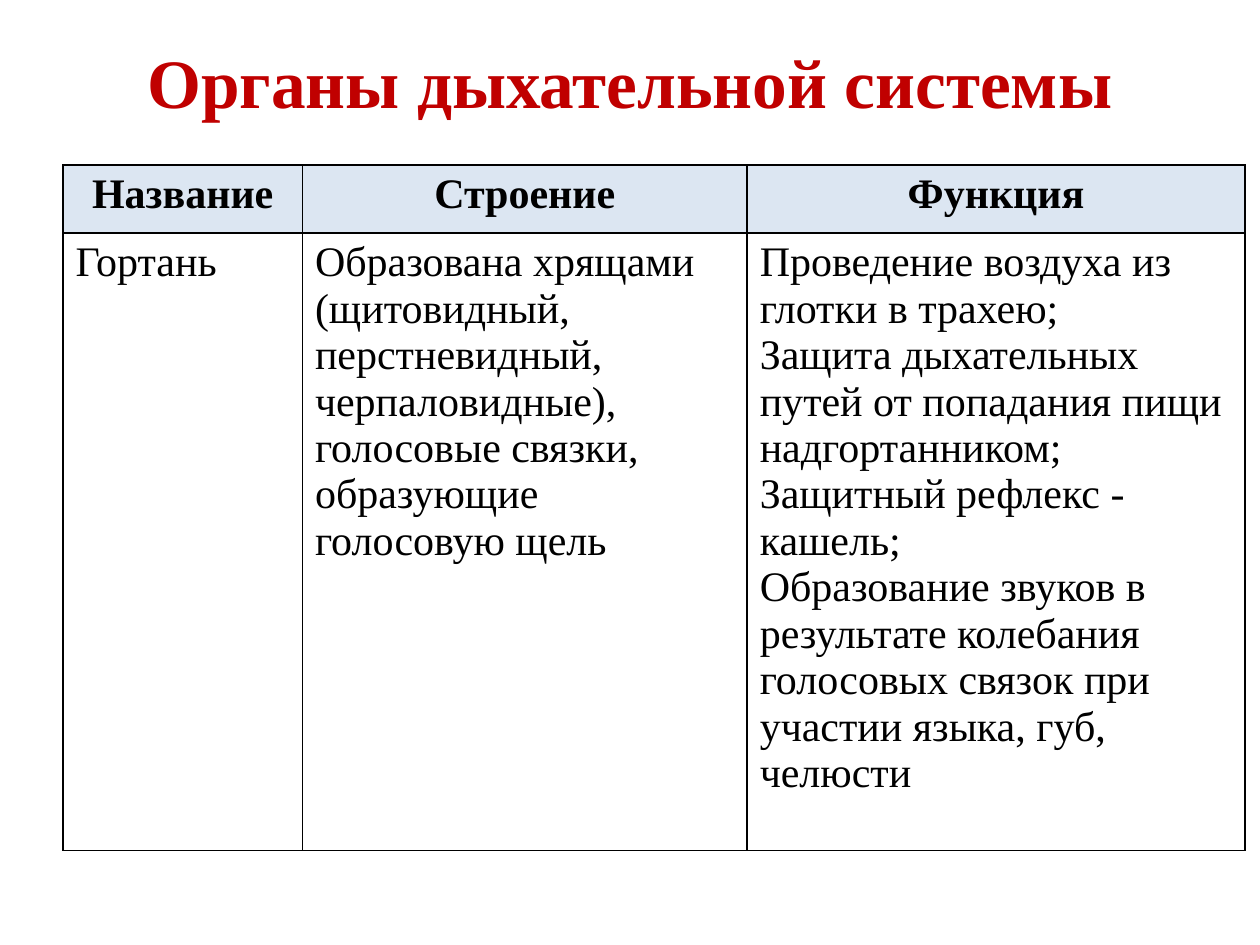
from dataclasses import dataclass

from lxml.etree import SubElement
from pptx import Presentation
from pptx.dml.color import RGBColor
from pptx.enum.text import MSO_ANCHOR as Anchor, PP_ALIGN as Align
from pptx.oxml.ns import qn
from pptx.util import Inches, Pt

HEADINGS = ["Название", "Строение", "Функция"]
LARYNX = [
    ["Гортань"],
    ["Образована хрящами (щитовидный, перстневидный, черпаловидные), "
     "голосовые связки, образующие голосовую щель"],
    ["Проведение воздуха из глотки в трахею;",
     "Защита дыхательных путей от попадания пищи надгортанником;",
     "Защитный рефлекс - кашель;",
     "Образование звуков в результате колебания голосовых связок "
     "при участии языка, губ, челюсти"],
]


def color(code):
    return RGBColor.from_string(code)


@dataclass
class Composer:
    """Style and current page; places and sizes are shares of the page."""
    deck: object
    page: object
    font: str = "Times New Roman"
    ink: str = "000000"
    accent: str = "C00000"
    header_fill: str = "DCE6F2"
    text_size: float = 24
    title_size: float = 39.6

    def across(self, share):
        return int(self.deck.slide_width * share)

    def down(self, share):
        return int(self.deck.slide_height * share)

    def add_text(self, frame, lines, size, ink, bold=False, align=Align.LEFT):
        for index, line in enumerate(lines):
            para = frame.add_paragraph() if index else frame.paragraphs[0]
            para.alignment = align
            span = para.add_run()
            span.text = line
            span.font.name = self.font
            span.font.size = Pt(size)
            span.font.bold = bold
            span.font.color.rgb = color(ink)

    def title(self, text, left, top, width, height):
        box = self.page.shapes.title
        box.left, box.top = self.across(left), self.down(top)
        box.width, box.height = self.across(width), self.down(height)
        box.text_frame.vertical_anchor = Anchor.MIDDLE
        self.add_text(box.text_frame, [text], self.title_size, self.accent,
                      True, Align.CENTER)

    def border(self, cell):
        properties = cell._tc.get_or_add_tcPr()
        for side in ("a:lnL", "a:lnR", "a:lnT", "a:lnB"):
            line = SubElement(properties, qn(side), w=str(Pt(1)))
            fill = SubElement(line, qn("a:solidFill"))
            SubElement(fill, qn("a:srgbClr"), val=self.ink)

    def table(self, rows, left, top, widths, heights):
        """Draw a table whose first row is the header."""
        table = self.page.shapes.add_table(
            len(heights), len(widths), self.across(left), self.down(top),
            self.across(sum(widths)), self.down(sum(heights))).table
        table.first_row = table.horz_banding = False
        for column, width in zip(table.columns, widths):
            column.width = self.across(width)
        for row, height in zip(table.rows, heights):
            row.height = self.down(height)
        for r, row in enumerate(rows):
            header = r == 0
            for c, lines in enumerate(row):
                cell = table.cell(r, c)
                self.border(cell)
                if header:
                    cell.fill.solid()
                    cell.fill.fore_color.rgb = color(self.header_fill)
                else:
                    cell.fill.background()
                self.add_text(cell.text_frame, lines, self.text_size, self.ink,
                              header, Align.CENTER if header else Align.LEFT)


def main():
    deck = Presentation()
    deck.slide_width, deck.slide_height = Inches(10), Inches(7.5)
    page = deck.slides.add_slide(deck.slide_layouts[5])
    composer = Composer(deck, page)
    composer.title("Органы дыхательной системы", 0.05, 0.04, 0.9, 0.09)
    composer.table([[[heading] for heading in HEADINGS], LARYNX],
                   left=0.05, top=1.31 / 7.5,
                   widths=[0.19, 3.53 / 10, 3.95 / 10],
                   heights=[0.54 / 7.5, 4.9 / 7.5])
    deck.save("out.pptx")


if __name__ == "__main__":
    main()
